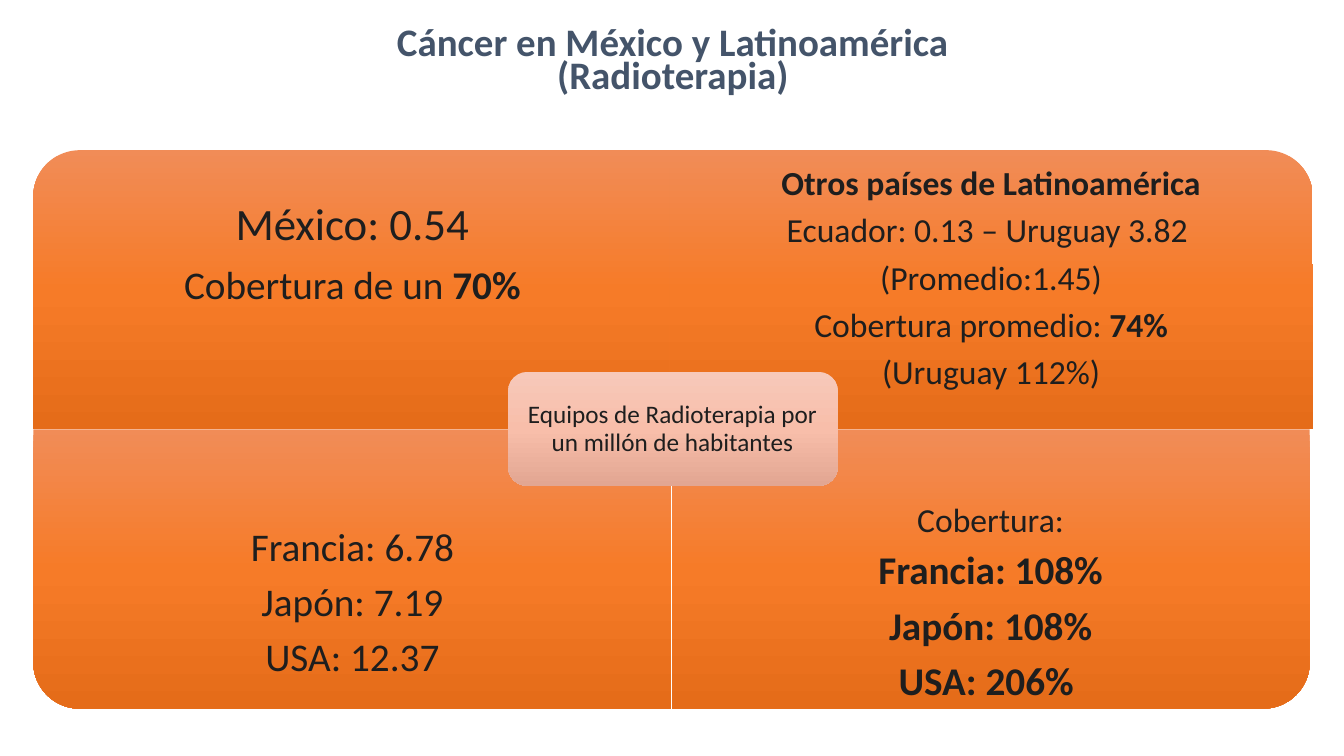
"""Builds the slide on radiotherapy coverage in Mexico and Latin America."""
from lxml import etree
from pptx import Presentation
from pptx import util as u
from pptx.dml.color import RGBColor
from pptx.enum import shapes, text
from pptx.oxml.ns import qn

FONT = "Calibri"
INK = RGBColor(0x1E, 0x1E, 0x1E)
SLATE = RGBColor(0x44, 0x54, 0x6A)
ORANGE = (RGBColor(0xF1, 0x8C, 0x57), RGBColor(0xF6, 0x7B, 0x28), RGBColor(0xE5, 0x6C, 0x19))
PINK = (RGBColor(0xF7, 0xC9, 0xBA), RGBColor(0xF8, 0xBE, 0xAA), RGBColor(0xE2, 0xA6, 0x92))

LEFT, MIDDLE, TOP, ROW = 0.33, 6.66, 1.49, 2.77
WIDTH, TEXT_H = 6.33, 2.08
BOTTOM = TOP + ROW


def fill_gradient(sp, colors):
    """Fill a shape with a vertical gradient that ignores its rotation."""
    sp.fill.gradient()
    grad = sp._element.spPr.find(qn("a:gradFill"))
    grad.set("rotWithShape", "0")
    stops = grad.find(qn("a:gsLst"))
    for old in list(stops):
        stops.remove(old)
    for i, color in enumerate(colors):
        gs = etree.SubElement(stops, qn("a:gs"), pos=str(i * 50000))
        etree.SubElement(gs, qn("a:srgbClr"), val=str(color))
    sp.fill.gradient_angle = 270


def add_panel(s, kind, x, y, w, h, colors, rotation=0):
    """Add a gradient panel whose box is given as it looks after rotation."""
    if rotation % 180:
        x, y, w, h = x + (w - h) / 2, y + (h - w) / 2, h, w
    sp = s.shapes.add_shape(kind, *map(u.Inches, (x, y, w, h)))
    sp.rotation = rotation
    sp.shadow.inherit = False
    sp.line.fill.background()
    fill_gradient(sp, colors)


def format_frame(tf, anchor, side, top=0, bottom=0):
    """Set wrapping, anchoring and insets of a text frame."""
    tf.word_wrap = True
    tf.auto_size = text.MSO_AUTO_SIZE.NONE
    tf.vertical_anchor = anchor
    tf.margin_left = tf.margin_right = u.Inches(side)
    tf.margin_top, tf.margin_bottom = u.Inches(top), u.Inches(bottom)


def add_lines(tf, lines, color, spacing, after):
    """Write centred lines, each a size followed by (text, bold) runs."""
    for i, (size, *runs) in enumerate(lines):
        p = tf.paragraphs[0] if i == 0 else tf.add_paragraph()
        p.alignment = text.PP_ALIGN.CENTER
        p.line_spacing = spacing
        p.space_before = u.Pt(0)
        p.space_after = u.Pt(round(size * after, 1))
        for words, bold in runs:
            r = p.add_run()
            r.text = words
            r.font.name, r.font.size, r.font.bold = FONT, u.Pt(size), bold
            r.font.color.rgb = color


def add_text(s, x, y, w, h, side, lines):
    """Add a vertically centred text box."""
    tf = s.shapes.add_textbox(*map(u.Inches, (x, y, w, h))).text_frame
    format_frame(tf, text.MSO_ANCHOR.MIDDLE, side)
    add_lines(tf, lines, INK, 0.9, 0.33)


def add_title(s, lines):
    """Move and fill the title placeholder."""
    sp = s.shapes.title
    sp.left, sp.top, sp.width, sp.height = map(u.Inches, (2.06, 0.26, 9.23, 1.07))
    format_frame(sp.text_frame, text.MSO_ANCHOR.BOTTOM, 0.1, 0.05, 0.38)
    add_lines(sp.text_frame, lines, SLATE, 0.7, 0)


def main():
    """Build and save the slide."""
    prs = Presentation()
    prs.slide_width, prs.slide_height = u.Inches(13.33), u.Inches(7.5)
    s = prs.slides.add_slide(prs.slide_layouts[5])
    add_title(s, [(27.8, ("Cáncer en México y Latinoamérica", True)),
                  (27.8, ("(Radioterapia)", True))])

    corner = shapes.MSO_SHAPE.ROUND_1_RECTANGLE
    for x, y, w, rotation in ((LEFT, TOP, WIDTH, 270), (6.64, TOP, 6.38, 0),
                              (LEFT, BOTTOM, WIDTH, 180), (MIDDLE, BOTTOM, WIDTH, 90)):
        add_panel(s, corner, x, y, w, ROW, ORANGE, rotation)

    lower = BOTTOM + ROW - TEXT_H
    add_text(s, LEFT, TOP, WIDTH, TEXT_H, 0.25, [
        (32, ("México: 0.54", False)),
        (28, ("Cobertura de un ", False), ("70%", True))])
    add_text(s, 6.64, 1.97, 6.38, 1.6, 0.19, [
        (24, ("Otros países de Latinoamérica", True)),
        (24, ("Ecuador: 0.13 – Uruguay 3.82 ", False)),
        (24, ("(Promedio:1.45)", False)),
        (24, ("Cobertura promedio: ", False), ("74%", True)),
        (24, ("(Uruguay 112%)", False))])
    add_text(s, LEFT, lower, WIDTH, TEXT_H, 0.22, [
        (28, (line, False)) for line in ("Francia: 6.78", "Japón: 7.19", "USA: 12.37")])
    add_text(s, MIDDLE, lower, WIDTH, TEXT_H, 0.19, [
        (24, ("Cobertura:", False)),
        *((28, (line, True)) for line in ("Francia: 108%", "Japón: 108%", "USA: 206% "))])

    add_panel(s, shapes.MSO_SHAPE.ROUNDED_RECTANGLE, 5.04, 3.69, 3.27, 1.13, PINK)
    add_text(s, 5.09, 3.75, 3.16, 1.02, 0.07, [
        (18, ("Equipos de Radioterapia por un millón de habitantes", False))])
    prs.save("out.pptx")


if __name__ == "__main__":
    main()
